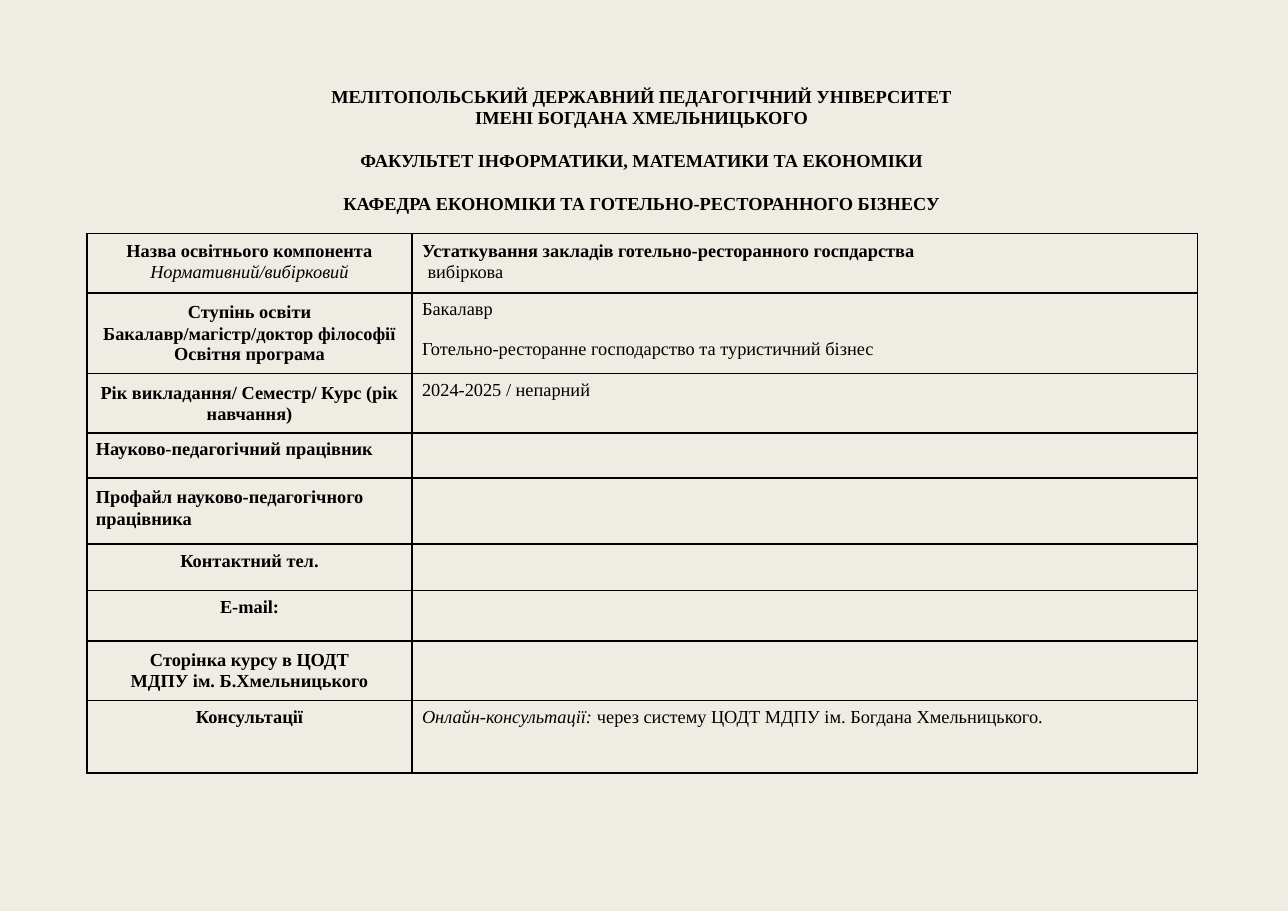
from dataclasses import dataclass

from lxml.etree import SubElement
from pptx import Presentation
from pptx.dml.color import RGBColor
from pptx.enum.text import PP_ALIGN as Align
from pptx.oxml.ns import qn
from pptx.util import Inches, Pt

COLORS = {"page": "EFEDE3", "ink": "000000"}
FONT = "Times New Roman"
COLUMNS = [2.95, 7.13]


@dataclass
class Para:
    """A paragraph: (text, style) runs and its spacing in points, indent in inches."""
    runs: list
    before: float = 0
    line: float = 0
    indent: float = 0
    align: Align = Align.LEFT


def label(text, before=4.5, line=0, style="b", align=Align.CENTER):
    """Return a one-run paragraph for the label column."""
    indent = 0.08 if align == Align.LEFT else 0
    return Para([(text, style)], before, line, indent, align)


def value(*runs, before=4.3, line=0, indent=0.09):
    """Return a paragraph for the value column."""
    return Para(list(runs), before, line, indent)


HEADING = [
    Para([("МЕЛІТОПОЛЬСЬКИЙ ДЕРЖАВНИЙ ПЕДАГОГІЧНИЙ УНІВЕРСИТЕТ\n"
           "ІМЕНІ БОГДАНА ХМЕЛЬНИЦЬКОГО", "b")], 1.9, 13.8, 0, Align.CENTER),
    Para([("ФАКУЛЬТЕТ ІНФОРМАТИКИ, МАТЕМАТИКИ ТА ЕКОНОМІКИ\n"
           "КАФЕДРА ЕКОНОМІКИ ТА ГОТЕЛЬНО-РЕСТОРАННОГО БІЗНЕСУ", "b")],
         0.8, 27.6, 0, Align.CENTER),
]

ROWS = [
    (0.54, 0.06,
     [label("Назва освітнього компонента", line=14),
      label("Нормативний/вибірковий", 0, 14, "i")],
     [value(("Устаткування закладів готельно-ресторанного госпдарства", "b"),
            before=4.5, line=14),
      value(("вибіркова", ""), before=0, line=14, indent=0.14)]),
    (0.73, 0.08,
     [label("Ступінь освіти\nБакалавр/магістр/доктор філософії", 5.5, 13.8),
      label("Освітня програма", 0, 13.4)],
     [value(("Бакалавр", "")),
      value(("Готельно-ресторанне господарство та туристичний бізнес", ""),
            before=12.5)]),
    (0.54, 0.08,
     [label("Рік викладання/ Семестр/ Курс (рік\nнавчання)", 5.5, 13.8)],
     [value(("2024-2025 / непарний", ""))]),
    (0.41, 0.06, [label("Науково-педагогічний працівник", align=Align.LEFT)], []),
    (0.6, 0.08,
     [label("Профайл науково-педагогічного\nпрацівника", 5.5, 13.8,
            align=Align.LEFT)], []),
    (0.42, 0.06, [label("Контактний тел.")], []),
    (0.46, 0.06, [label("E-mail:")], []),
    (0.54, 0.08,
     [label("Сторінка курсу в ЦОДТ\nМДПУ ім. Б.Хмельницького", 5.5, 13.8)], []),
    (0.66, 0.06, [label("Консультації")],
     [value(("Онлайн-консультації: ", "i"),
            ("через систему ЦОДТ МДПУ ім. Богдана Хмельницького.", ""))]),
]


def add_span(para, text, style):
    """Add one run in the page font."""
    span = para.add_run()
    span.text = text
    font = span.font
    font.name, font.size = FONT, Pt(12)
    font.bold, font.italic = "b" in style, "i" in style
    font.color.rgb = RGBColor.from_string(COLORS["ink"])


def write(frame, paras, top):
    """Fill a text frame with paragraphs below a top inset in inches."""
    frame.word_wrap = True
    for index, content in enumerate(paras):
        para = frame.add_paragraph() if index else frame.paragraphs[0]
        para.alignment = content.align
        para.space_before = Pt(content.before)
        if content.line:
            para.line_spacing = Pt(content.line)
        if content.indent:
            para._p.get_or_add_pPr().set("marL", str(Inches(content.indent)))
        for text, style in content.runs:
            for number, part in enumerate(text.split("\n")):
                if number:
                    para.add_line_break()
                add_span(para, part, style)
    set_margins(frame, top)


def set_margins(holder, top):
    """Set a top inset in inches and no other inset."""
    holder.margin_left = holder.margin_right = holder.margin_bottom = 0
    holder.margin_top = Inches(top)


def add_borders(cell):
    """Draw a thin line on all four sides of a cell."""
    props = cell._tc.get_or_add_tcPr()
    for side in ("lnL", "lnR", "lnT", "lnB"):
        line = SubElement(props, qn(f"a:{side}"), w=str(Pt(1)))
        fill = SubElement(line, qn("a:solidFill"))
        SubElement(fill, qn("a:srgbClr"), val=COLORS["ink"])


def add_heading(page, left, top, width, height):
    """Place the university, faculty and department names."""
    box = page.shapes.add_textbox(*map(Inches, (left, top, width, height)))
    write(box.text_frame, HEADING, 0.03)


def add_course_table(page, left, top):
    """Place the table of course details."""
    size = sum(COLUMNS), sum(row[0] for row in ROWS)
    table = page.shapes.add_table(len(ROWS), len(COLUMNS),
                                  *map(Inches, (left, top, *size))).table
    table.first_row = table.horz_banding = False
    for column, width in zip(table.columns, COLUMNS):
        column.width = Inches(width)
    for row, (height, inset, labels, values) in zip(table.rows, ROWS):
        row.height = Inches(height)
        for cell, paras, gap in zip(row.cells, (labels, values), (inset, 0.06)):
            write(cell.text_frame, paras, gap)
            set_margins(cell, gap)
            add_borders(cell)
            cell.fill.background()


def main():
    """Build and save the deck."""
    deck = Presentation()
    deck.slide_width, deck.slide_height = Inches(11.69), Inches(8.27)
    page = deck.slides.add_slide(deck.slide_layouts[6])
    page.background.fill.solid()
    page.background.fill.fore_color.rgb = RGBColor.from_string(COLORS["page"])
    add_heading(page, 2.98, 0.75, 5.69, 1.19)
    add_course_table(page, 0.79, 2.12)
    deck.save("out.pptx")


if __name__ == "__main__":
    main()
